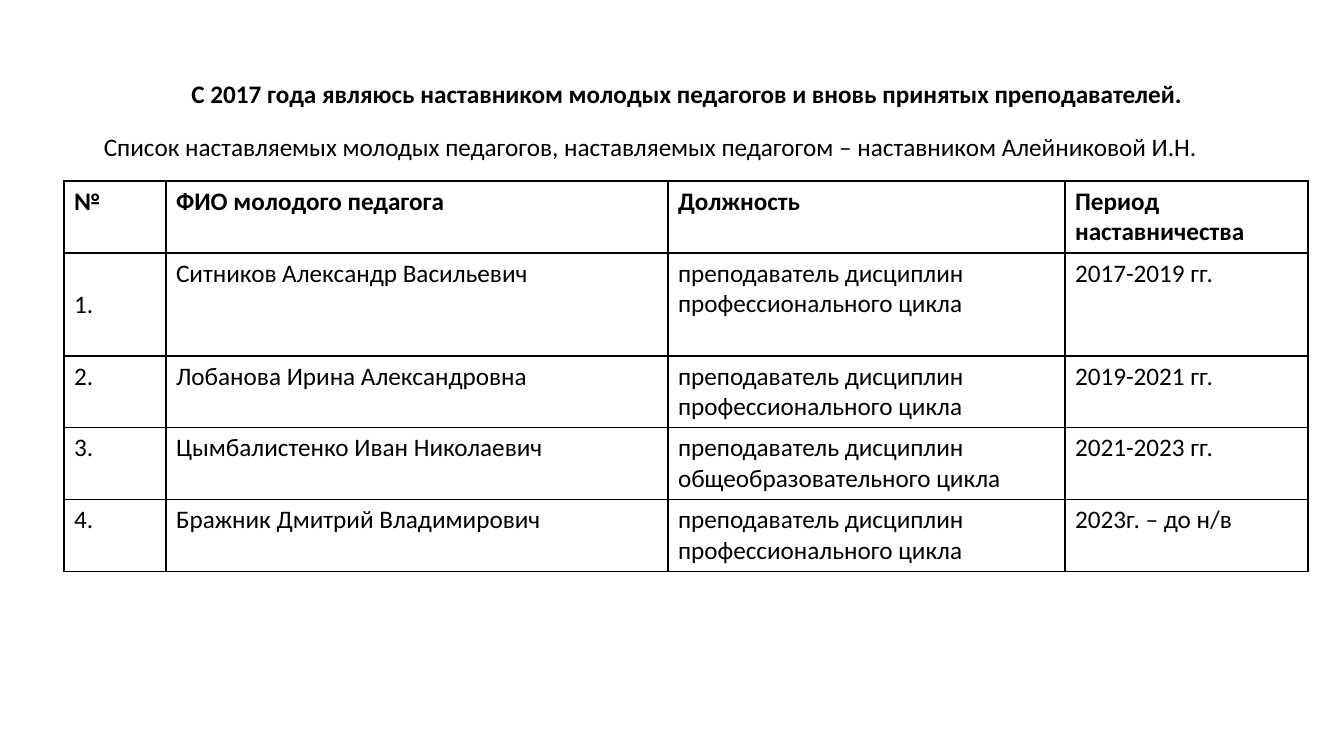
from lxml import etree
from pptx import Presentation
from pptx.dml.color import RGBColor
from pptx.enum.shapes import MSO_SHAPE
from pptx.enum.text import MSO_ANCHOR, PP_ALIGN
from pptx.oxml.ns import qn
from pptx.util import Emu, Pt

RECTANGLE = MSO_SHAPE.RECTANGLE
TOP, MIDDLE = MSO_ANCHOR.TOP, MSO_ANCHOR.MIDDLE
LEFT, CENTER = PP_ALIGN.LEFT, PP_ALIGN.CENTER
BLACK = RGBColor(0, 0, 0)
WHITE = RGBColor(255, 255, 255)
FONT = "Calibri"
EMU_PER_PX = 914400 / 100.8

HEADINGS = [
    {"text": "С 2017 года являюсь наставником молодых педагогов и вновь принятых преподавателей.",
     "box": (48, 60, 1278, 67), "bold": True, "anchor": MIDDLE},
    {"text": "Список наставляемых молодых педагогов, наставляемых педагогом – наставником Алейниковой И.Н.",
     "box": (88, 126, 1125, 69), "bold": False, "anchor": TOP},
]
HEADER = ("№", "ФИО молодого педагога", "Должность", "Период наставничества")
PROFESSIONAL = "преподаватель дисциплин профессионального цикла"
GENERAL = "преподаватель дисциплин общеобразовательного цикла"
MENTEES = [
    ("Ситников Александр Васильевич", PROFESSIONAL, "2017-2019 гг."),
    ("Лобанова Ирина Александровна", PROFESSIONAL, "2019-2021 гг."),
    ("Цымбалистенко Иван Николаевич", GENERAL, "2021-2023 гг."),
    ("Бражник Дмитрий Владимирович", PROFESSIONAL, "2023г. – до н/в"),
]
TABLE_LEFT, TABLE_TOP = 64, 181
COLUMN_WIDTHS = (102, 502, 397, 243)
ROW_HEIGHTS = (72, 103, 71, 72, 72)


def px(value):
    return Emu(round(value * EMU_PER_PX))


def write_text(frame, text, bold=False, align=LEFT):
    frame.word_wrap = True
    paragraph = frame.paragraphs[0]
    paragraph.alignment = align
    run = paragraph.add_run()
    run.text = text
    run.font.name = FONT
    run.font.size = Pt(18)
    run.font.bold = bold
    run.font.color.rgb = BLACK


def add_borders(cell):
    properties = cell._tc.get_or_add_tcPr()
    for side in ("lnL", "lnR", "lnT", "lnB"):
        line = etree.SubElement(properties, qn(f"a:{side}"), w=str(Pt(1)))
        fill = etree.SubElement(line, qn("a:solidFill"))
        etree.SubElement(fill, qn("a:srgbClr"), val=str(BLACK))


def add_heading(slide, text, box, bold, anchor):
    shape = slide.shapes.add_shape(RECTANGLE, *map(px, box))
    shape.shadow.inherit = False
    shape.fill.solid()
    shape.fill.fore_color.rgb = WHITE
    shape.line.fill.background()
    shape.text_frame.vertical_anchor = anchor
    write_text(shape.text_frame, text, bold=bold, align=CENTER)


def add_mentee_table(slide):
    rows = [HEADER] + [(f"{number}.", *mentee) for number, mentee in enumerate(MENTEES, 1)]
    table = slide.shapes.add_table(
        len(rows), len(HEADER), px(TABLE_LEFT), px(TABLE_TOP),
        px(sum(COLUMN_WIDTHS)), px(sum(ROW_HEIGHTS))).table
    table.first_row = False
    table.horz_banding = False
    for column, width in zip(table.columns, COLUMN_WIDTHS):
        column.width = px(width)
    for row, height in zip(table.rows, ROW_HEIGHTS):
        row.height = px(height)
    for row_index, texts in enumerate(rows):
        for column_index, text in enumerate(texts):
            cell = table.cell(row_index, column_index)
            add_borders(cell)
            cell.fill.background()
            write_text(cell.text_frame, text, bold=row_index == 0)
    table.cell(1, 0).vertical_anchor = MIDDLE


def main():
    presentation = Presentation()
    presentation.slide_width = px(1344)
    presentation.slide_height = px(756)
    slide = presentation.slides.add_slide(presentation.slide_layouts[6])
    for heading in HEADINGS:
        add_heading(slide, **heading)
    add_mentee_table(slide)
    presentation.save("out.pptx")


if __name__ == "__main__":
    main()
